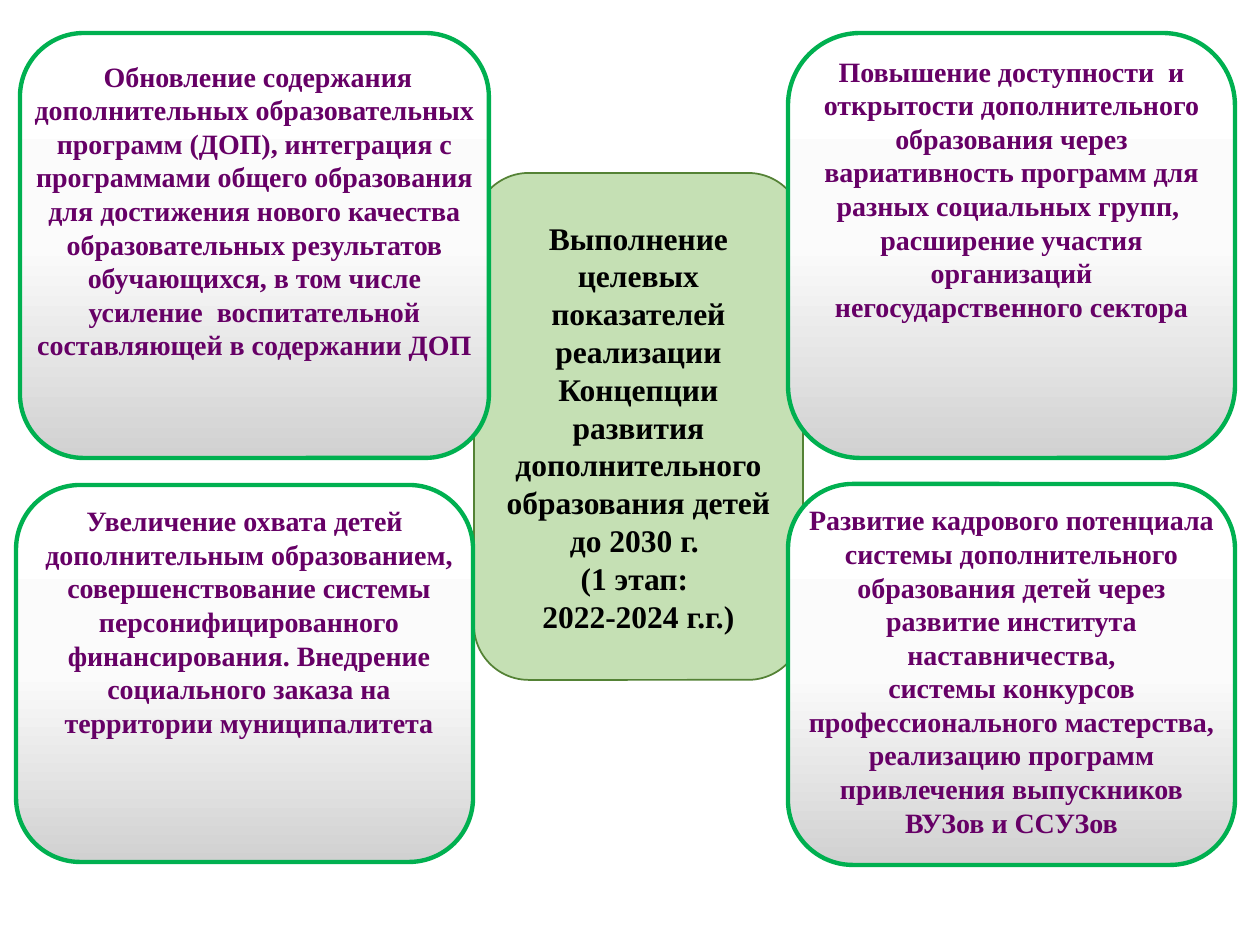
from copy import deepcopy
from dataclasses import dataclass

from pptx import Presentation
from pptx import util as u
from pptx.dml.color import RGBColor
from pptx.enum import shapes, text
from pptx.oxml.ns import qn


@dataclass(frozen=True)
class Theme:
    font: str = "Times New Roman"
    core_fill: str = "C5E0B4"
    core_line: str = "548235"
    core_text: str = "000000"
    card_stops: tuple = ("FFFFFF", "FBFBFB", "D1D1D1")
    card_line: str = "00B050"
    card_text: str = "660066"
    core_size: int = 18
    card_size: int = 16


theme = Theme()
rgb = RGBColor.from_string
PX = u.Inches(1) / 126


def px(*values):
    return [round(v * PX) for v in values]


def write(tf, lines, size, color, margin=0, indent=0):
    tf.word_wrap = True
    for i, line in enumerate(lines):
        p = tf.paragraphs[0] if i == 0 else tf.add_paragraph()
        p.alignment = text.PP_ALIGN.CENTER
        pPr = p._p.get_or_add_pPr()
        pPr.set("marL", str(px(margin)[0]))
        pPr.set("indent", str(px(indent)[0]))
        r = p.add_run()
        r.text = line
        r.font.name = theme.font
        r.font.size = u.Pt(size)
        r.font.bold = True
        r.font.color.rgb = rgb(color)


prs = Presentation()
prs.slide_width, prs.slide_height = px(1260, 945)
s = prs.slides.add_slide(prs.slide_layouts[6])

core = s.shapes.add_shape(shapes.MSO_SHAPE.ROUNDED_RECTANGLE, *px(474, 173, 329, 507))
core.shadow.inherit = False
core.fill.solid()
core.fill.fore_color.rgb = rgb(theme.core_fill)
core.line.color.rgb = rgb(theme.core_line)
core.line.width = u.Pt(1)
core.text_frame.vertical_anchor = text.MSO_ANCHOR.MIDDLE
write(core.text_frame, [
    "Выполнение целевых показателей реализации Концепции развития "
    "дополнительного образования детей до 2030 г. ",
    "(1 этап: ",
    "2022-2024 г.г.)",
], theme.core_size, theme.core_text)

cards = [
    ((16, 485, 457, 377), 0.17, 9, -9, [
        "Увеличение охвата детей дополнительным образованием, совершенствование "
        "системы персонифицированного финансирования. Внедрение социального "
        "заказа на территории муниципалитета",
    ]),
    ((20, 33, 469, 425), 0.15, 0, 0, []),
    ((788, 484, 447, 381), 0.17, 0, 0, [
        "Развитие кадрового потенциала",
        " системы дополнительного ",
        "образования детей через развитие института наставничества,",
        "системы конкурсов профессионального мастерства, реализацию программ "
        "привлечения выпускников ВУЗов и ССУЗов",
    ]),
    ((788, 33, 447, 425), 0.17, 0, -35, [
        "Повышение доступности  и открытости дополнительного образования через "
        "вариативность программ для разных социальных групп,  расширение участия "
        "организаций негосударственного сектора",
    ]),
]

for box, corner, margin, indent, lines in cards:
    sp = s.shapes.add_shape(shapes.MSO_SHAPE.ROUNDED_RECTANGLE, *px(*box))
    sp.shadow.inherit = False
    sp.adjustments[0] = corner
    sp.line.color.rgb = rgb(theme.card_line)
    sp.line.width = u.Pt(2.5)

    sp.fill.gradient()
    sp.fill.gradient_angle = 270
    stop_list = sp._element.spPr.find(qn("a:gradFill")).find(qn("a:gsLst"))
    stop_list.insert(1, deepcopy(stop_list[0]))
    for i, (stop, color) in enumerate(zip(sp.fill.gradient_stops, theme.card_stops)):
        stop.position = i / 2
        stop.color.rgb = rgb(color)

    tf = sp.text_frame
    tf.vertical_anchor = text.MSO_ANCHOR.TOP
    tf.margin_left = tf.margin_top = tf.margin_right = tf.margin_bottom = 0
    write(tf, lines, theme.card_size, theme.card_text, margin, indent)

renewal = s.shapes.add_textbox(*px(20, 53, 469, 496))
write(renewal.text_frame, [
    " Обновление содержания дополнительных образовательных программ (ДОП), "
    "интеграция с программами общего образования для достижения нового качества "
    "образовательных результатов обучающихся, в том числе усиление  "
    "воспитательной составляющей в содержании ДОП",
], theme.card_size, theme.card_text)

prs.save("out.pptx")
